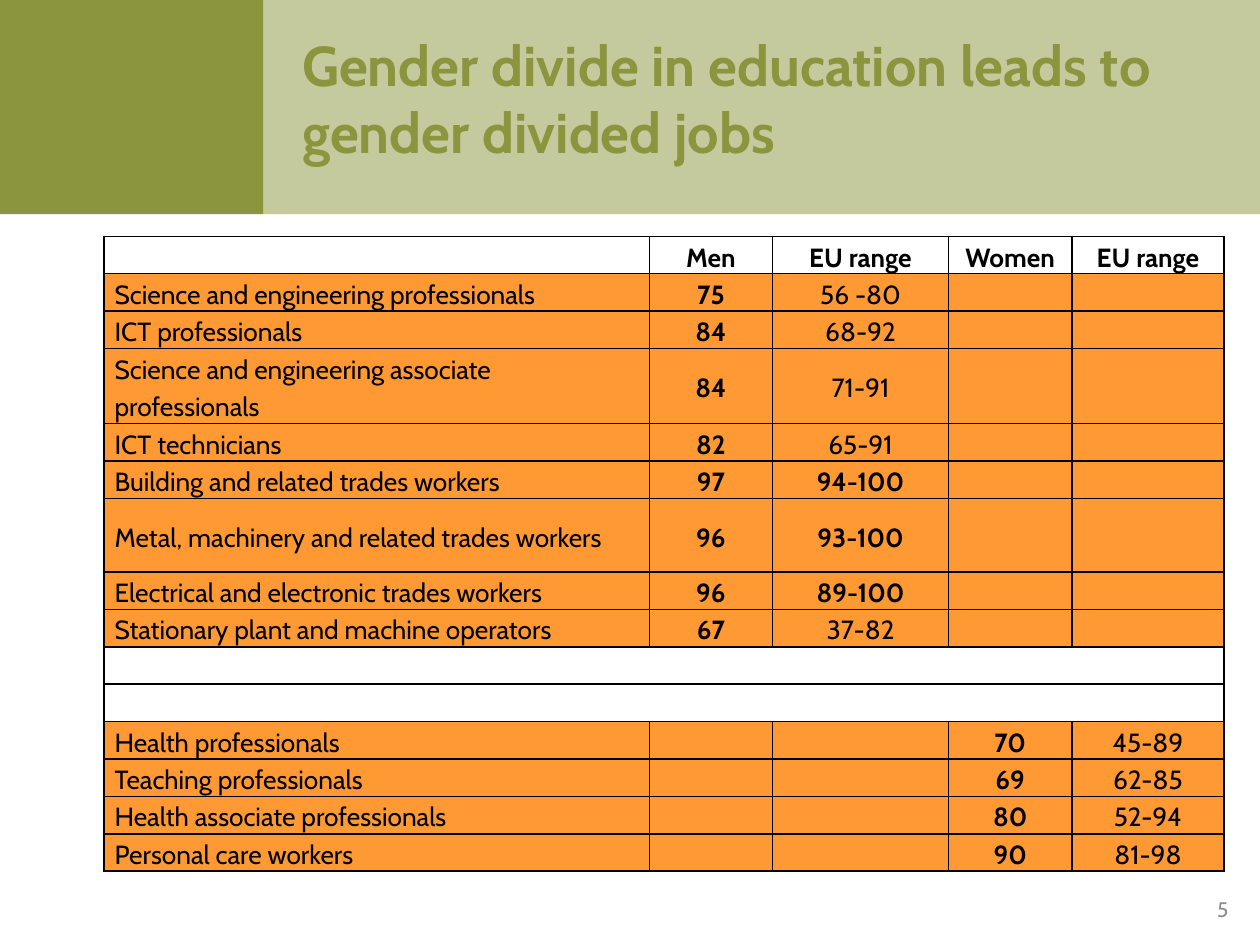
from lxml import etree
from pptx import Presentation
from pptx.dml.color import RGBColor
from pptx.enum import shapes, text
from pptx.oxml import ns
from pptx.util import Pt

FONT = "Cabin"
OLIVE = RGBColor(0x8A, 0x95, 0x3E)
ORANGE = RGBColor(0xFF, 0x99, 0x33)
BLACK = RGBColor(0, 0, 0)
GREY = RGBColor(0x8C, 0x8C, 0x8C)

TITLE = "Gender divide in education leads to gender divided jobs"
PAGE = "5"
HEADER = ("", "Men", "EU range", "Women", "EU range")
MEN = [
    ("Science and engineering professionals", "75", "56 -80"),
    ("ICT professionals", "84", "68-92"),
    ("Science and engineering associate professionals", "84", "71-91"),
    ("ICT technicians", "82", "65-91"),
    ("Building and related trades workers", "97", "94-100"),
    ("Metal, machinery and related trades workers", "96", "93-100"),
    ("Electrical and electronic trades workers", "96", "89-100"),
    ("Stationary plant and machine operators", "67", "37-82"),
]
WOMEN = [
    ("Health professionals", "70", "45-89"),
    ("Teaching professionals", "69", "62-85"),
    ("Health associate professionals", "80", "52-94"),
    ("Personal care workers", "90", "81-98"),
]
BOLD_RANGES = {"94-100", "93-100", "89-100"}
GAP = ("",) * 5
ROWS = [HEADER]
ROWS += [(job, share, span, "", "") for job, share, span in MEN]
ROWS += [GAP, GAP]
ROWS += [(job, "", "", share, span) for job, share, span in WOMEN]

COL_WIDTHS = (311.5, 70.5, 100.5, 70.5, 87)
ROW_HEIGHT = 21.4
TALL_ROWS = {3: 43, 6: 42}
HEADER_HEIGHT = 122.4
SPLIT = 150.5


def add_run(p, words, size, color, bold=False):
    r = p.add_run()
    r.text = words
    r.font.name = FONT
    r.font.size = Pt(size)
    r.font.bold = bold
    r.font.color.rgb = color


def add_text(s, box, words, size, color, bold=False, align=text.PP_ALIGN.LEFT):
    tf = s.shapes.add_textbox(*map(Pt, box)).text_frame
    tf.word_wrap = True
    tf.vertical_anchor = text.MSO_ANCHOR.MIDDLE
    p = tf.paragraphs[0]
    p.alignment = align
    add_run(p, words, size, color, bold)


def add_band(s, left, width, alpha=None):
    sp = s.shapes.add_shape(shapes.MSO_SHAPE.RECTANGLE,
                            Pt(left), 0, Pt(width), Pt(HEADER_HEIGHT))
    sp.shadow.inherit = False
    sp.line.fill.background()
    sp.fill.solid()
    sp.fill.fore_color.rgb = OLIVE
    if alpha:
        clr = sp.fill._xPr.find(".//" + ns.qn("a:srgbClr"))
        etree.SubElement(clr, ns.qn("a:alpha"), val=str(alpha * 1000))


def add_borders(cell):
    tc_pr = cell._tc.get_or_add_tcPr()
    for i, side in enumerate(("lnL", "lnR", "lnT", "lnB")):
        ln = etree.Element(ns.qn("a:" + side), w=str(Pt(1)))
        fill = etree.SubElement(ln, ns.qn("a:solidFill"))
        etree.SubElement(fill, ns.qn("a:srgbClr"), val=str(BLACK))
        tc_pr.insert(i, ln)


def fill_cell(cell, words, row, col):
    cell.margin_left = cell.margin_right = Pt(6)
    cell.margin_top = cell.margin_bottom = 0
    anchor = text.MSO_ANCHOR
    cell.vertical_anchor = anchor.BOTTOM if row == 0 else anchor.MIDDLE
    if ROWS[row] in (HEADER, GAP):
        cell.fill.background()
    else:
        cell.fill.solid()
        cell.fill.fore_color.rgb = ORANGE
    add_borders(cell)
    p = cell.text_frame.paragraphs[0]
    if not words:
        etree.SubElement(p._p, ns.qn("a:endParaRPr"), sz="1500")
        return
    p.alignment = text.PP_ALIGN.CENTER if col else text.PP_ALIGN.LEFT
    p.line_spacing = 1.15
    p.space_after = Pt(10)
    bold = row == 0 or col in (1, 3) or words in BOLD_RANGES
    add_run(p, words, 15, BLACK, bold)


def add_jobs_table(s):
    heights = [TALL_ROWS.get(i, ROW_HEIGHT) for i in range(len(ROWS))]
    frame = s.shapes.add_table(len(ROWS), len(COL_WIDTHS), Pt(59.5), Pt(135),
                               Pt(sum(COL_WIDTHS)), Pt(sum(heights)))
    table = frame.table
    table.first_row = table.horz_banding = False
    for column, width in zip(table.columns, COL_WIDTHS):
        column.width = Pt(width)
    for i, (words, height) in enumerate(zip(ROWS, heights)):
        table.rows[i].height = Pt(height)
        for j, word in enumerate(words):
            fill_cell(table.cell(i, j), word, i, j)
        if words == GAP:
            table.cell(i, 0).merge(table.cell(i, len(words) - 1))


def main():
    prs = Presentation()
    prs.slide_width, prs.slide_height = Pt(720), Pt(540)
    s = prs.slides.add_slide(prs.slide_layouts[6])
    add_text(s, (677.5, 508.5, 31.5, 22), PAGE, 12, GREY,
             align=text.PP_ALIGN.RIGHT)
    add_band(s, 0, SPLIT)
    add_band(s, SPLIT, 720 - SPLIT, alpha=50)
    add_text(s, (165.6, 36, 539.3, 39.6), TITLE, 32, OLIVE, bold=True)
    add_jobs_table(s)
    prs.save("out.pptx")


if __name__ == "__main__":
    main()
